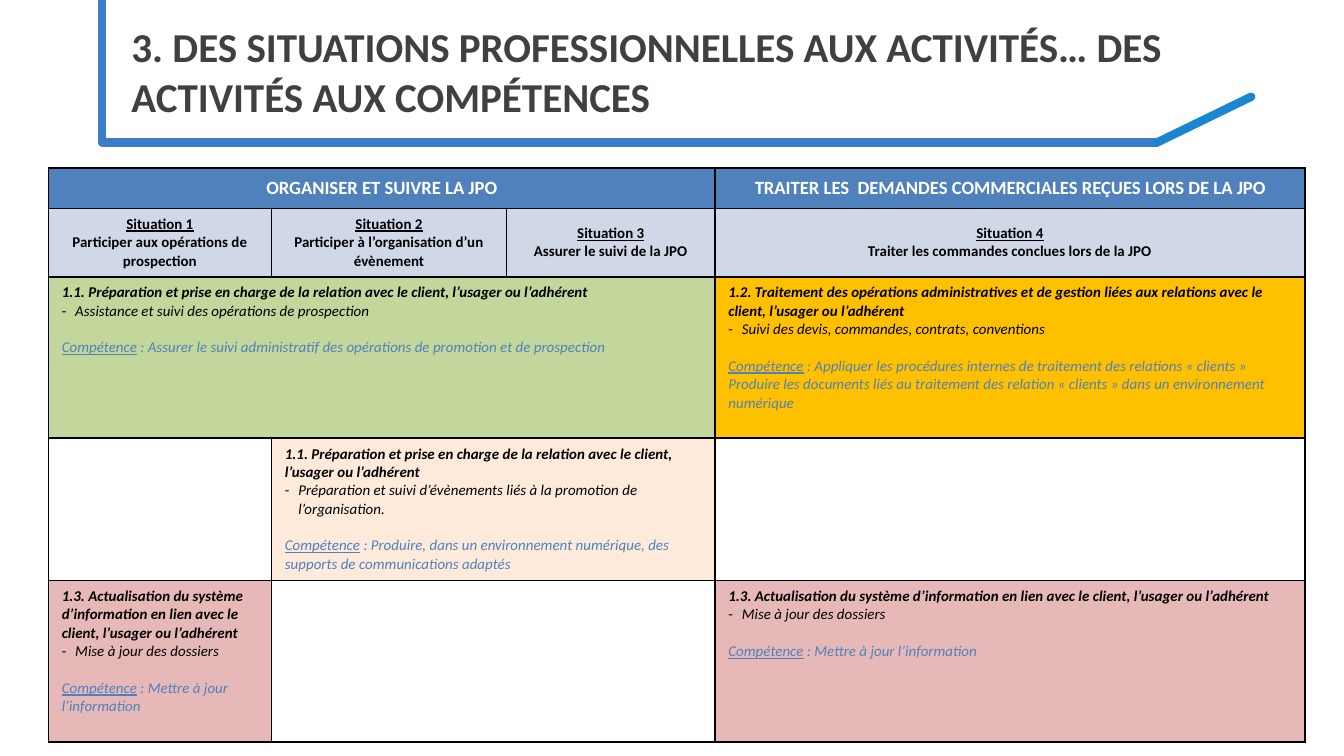
import pptx
import pptx.util
import pptx.dml.color
import pptx.enum.shapes
import pptx.enum.text
import pptx.oxml.ns
import lxml.etree

Inches = pptx.util.Inches
Pt = pptx.util.Pt
MID = pptx.enum.text.MSO_ANCHOR.MIDDLE
CENTER = pptx.enum.text.PP_ALIGN.CENTER
qn = pptx.oxml.ns.qn

hues = {
    "edge": "3D7CC9", "tip": "1A86D0", "title": "404040",
    "blue": "4F81BD", "pale": "D0D8E8", "green": "C3D69B",
    "gold": "FFC000", "peach": "FDEADA", "pink": "E6B9B8",
    "white": "FFFFFF", "black": "000000",
}


def tint(name):
    return pptx.dml.color.RGBColor.from_string(hues[name])


def write(para, text, size, hue, bold=False, slant=False, under=False):
    run = para.add_run()
    run.text = text
    font = run.font
    font.name = "Calibri"
    font.size = Pt(size)
    font.color.rgb = tint(hue)
    font.bold = bold
    font.italic = slant
    font.underline = under


deck = pptx.Presentation()
deck.slide_width = Inches(10)
deck.slide_height = Inches(10 * 9 / 16)
slide = deck.slides.add_slide(deck.slide_layouts[6])

lines = [
    (0.76, 1.06, 8.61, 1.06, "edge"),
    (8.61, 1.06, 9.31, 0.72, "tip"),
    (0.76, 1.06, 0.76, 0, "edge"),
]
for x1, y1, x2, y2, hue in lines:
    line = slide.shapes.add_connector(
        pptx.enum.shapes.MSO_CONNECTOR.STRAIGHT,
        Inches(x1), Inches(y1), Inches(x2), Inches(y2))
    line.line.color.rgb = tint(hue)
    line.line.width = Pt(4.5)
    props = line.element.spPr
    props.find(qn("a:ln")).set("cap", "rnd")
    lxml.etree.SubElement(props, qn("a:effectLst"))

box = slide.shapes.add_textbox(Inches(0.88), 0, Inches(8.62), Inches(1.06))
frame = box.text_frame
frame.word_wrap = True
frame.vertical_anchor = MID
write(frame.paragraphs[0],
      "3. DES SITUATIONS PROFESSIONNELLES AUX ACTIVITÉS… DES ACTIVITÉS AUX COMPÉTENCES",
      22, "title", bold=True)

cols = [1.66, 1.75, 1.55, 4.39]
rows = [0.3, 0.51, 1.2, 1.06, 1.2]
table = slide.shapes.add_table(
    len(rows), len(cols), Inches(0.36), Inches(1.25),
    Inches(sum(cols)), Inches(sum(rows))).table
for col, width in zip(table.columns, cols):
    col.width = Inches(width)
for row, height in zip(table.rows, rows):
    row.height = Inches(height)

for cell in table.iter_cells():
    props = cell._tc.get_or_add_tcPr()
    for side in ("lnL", "lnR", "lnT", "lnB"):
        edge = lxml.etree.SubElement(props, qn("a:" + side), w=str(Pt(1)))
        fill = lxml.etree.SubElement(edge, qn("a:solidFill"))
        lxml.etree.SubElement(fill, qn("a:srgbClr"), val=hues["black"])
    cell.fill.solid()
    cell.fill.fore_color.rgb = tint("white")

for row, first, last in [(0, 0, 2), (2, 0, 2), (3, 1, 2), (4, 1, 2)]:
    table.cell(row, first).merge(table.cell(row, last))

heads = [
    (0, "ORGANISER ET SUIVRE LA JPO"),
    (3, "TRAITER LES  DEMANDES COMMERCIALES REÇUES LORS DE LA JPO"),
]
for col, text in heads:
    cell = table.cell(0, col)
    cell.fill.fore_color.rgb = tint("blue")
    cell.vertical_anchor = MID
    para = cell.text_frame.paragraphs[0]
    para.alignment = CENTER
    write(para, text, 10, "white", bold=True)

tasks = [
    "Participer aux opérations de prospection",
    "Participer à l’organisation d’un évènement",
    "Assurer le suivi de la JPO",
    "Traiter les commandes conclues lors de la JPO",
]
for col, task in enumerate(tasks):
    cell = table.cell(1, col)
    cell.fill.fore_color.rgb = tint("pale")
    cell.vertical_anchor = MID
    frame = cell.text_frame
    top, low = frame.paragraphs[0], frame.add_paragraph()
    top.alignment = low.alignment = CENTER
    write(top, f"Situation {col + 1}", 8, "black", bold=True, under=True)
    write(low, task, 8, "black", bold=True)

client = "1.1. Préparation et prise en charge de la relation avec le client, l’usager ou l’adhérent"
update = ("1.3. Actualisation du système d’information en lien avec le client, l’usager ou l’adhérent",
          "Mise à jour des dossiers", ["Mettre à jour l’information"])
bodies = [
    (2, 0, "green", client, "Assistance et suivi des opérations de prospection",
     ["Assurer le suivi administratif des opérations de promotion et de prospection"]),
    (2, 3, "gold",
     "1.2. Traitement des opérations administratives et de gestion liées aux relations avec le client, l’usager ou l’adhérent",
     "Suivi des devis, commandes, contrats, conventions",
     ["Appliquer les procédures internes de traitement des relations « clients »",
      "Produire les documents liés au traitement des relation « clients » dans un environnement numérique"]),
    (3, 1, "peach", client,
     "Préparation et suivi d’évènements liés à la promotion de l’organisation.",
     ["Produire, dans un environnement numérique, des supports de communications adaptés"]),
    (4, 0, "pink", *update),
    (4, 3, "pink", *update),
]
for row, col, hue, head, item, skills in bodies:
    cell = table.cell(row, col)
    cell.fill.fore_color.rgb = tint(hue)
    frame = cell.text_frame
    write(frame.paragraphs[0], head, 8, "black", bold=True, slant=True)

    para = frame.add_paragraph()
    props = para._p.get_or_add_pPr()
    props.set("marL", str(Inches(0.1)))
    props.set("indent", str(Inches(-0.1)))
    lxml.etree.SubElement(props, qn("a:buFont"), typeface="Calibri")
    lxml.etree.SubElement(props, qn("a:buChar"), char="-")
    write(para, item, 8, "black", slant=True)

    para = frame.add_paragraph()
    para.space_before = Pt(9.8)
    write(para, "Compétence", 8, "blue", slant=True, under=True)
    write(para, " : " + skills[0], 8, "blue", slant=True)
    for skill in skills[1:]:
        write(frame.add_paragraph(), skill, 8, "blue", slant=True)

deck.save("out.pptx")
